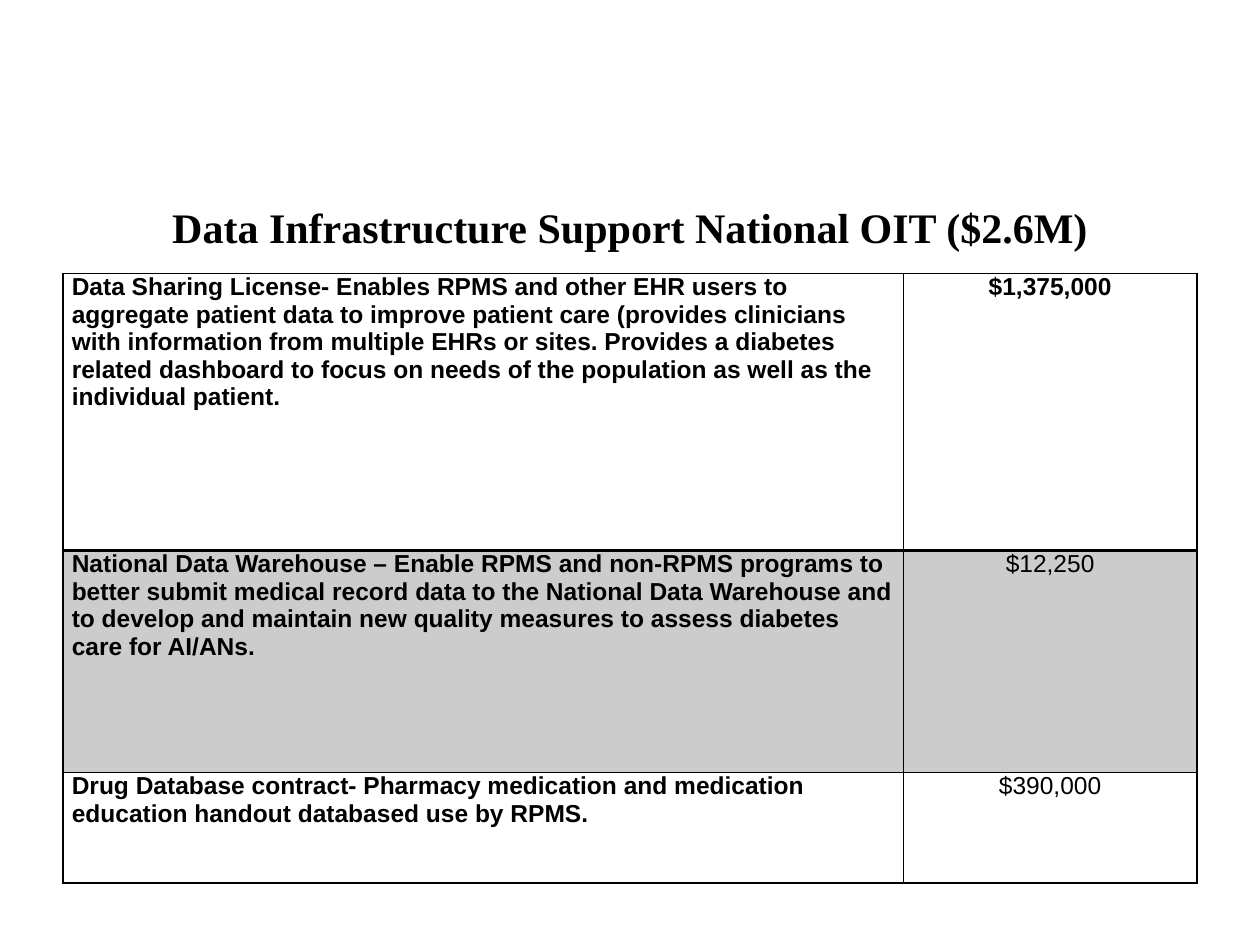
from lxml import etree
from pptx import Presentation
from pptx.dml.color import RGBColor
from pptx.enum.text import MSO_ANCHOR, PP_ALIGN
from pptx.oxml.ns import qn
from pptx.util import Inches, Pt

LEFT, CENTER = PP_ALIGN.LEFT, PP_ALIGN.CENTER
MIDDLE, TOP = MSO_ANCHOR.MIDDLE, MSO_ANCHOR.TOP

COLORS = {"ink": "000000", "white": "FFFFFF", "band": "CCCCCC"}
TITLE = "Data Infrastructure Support National OIT ($2.6M)"
BUDGET = [
    ("Data Sharing License- Enables RPMS and other EHR users to aggregate patient "
     "data to improve patient care (provides clinicians with information from "
     "multiple EHRs or sites. Provides a diabetes related dashboard to focus on "
     "needs of the population as well as the individual patient.",
     "$1,375,000", True, 2.2, "white"),
    ("National Data Warehouse – Enable RPMS and non-RPMS programs to better submit "
     "medical record data to the National Data Warehouse and to develop and "
     "maintain new quality measures to assess diabetes care for AI/ANs.",
     "$12,250", False, 1.76, "band"),
    ("Drug Database contract- Pharmacy medication and medication education "
     "handout databased use by RPMS.",
     "$390,000", False, 0.88, "white"),
]
COLUMN_WIDTHS = [6.67, 2.33]
MARGIN = 0.5


def write(frame, text, font_name, size, bold, align):
    para = frame.paragraphs[0]
    para.text = text
    para.alignment = align
    para.font.name = font_name
    para.font.size = Pt(size)
    para.font.bold = bold
    para.font.color.rgb = RGBColor.from_string(COLORS["ink"])


def add_borders(cell, widths):
    properties = cell._tc.get_or_add_tcPr()
    for index, (side, width) in enumerate(widths.items()):
        line = etree.Element(qn(f"a:ln{side}"), w=str(Pt(width)))
        fill = etree.SubElement(line, qn("a:solidFill"))
        etree.SubElement(fill, qn("a:srgbClr"), val=COLORS["ink"])
        properties.insert(index, line)


def add_title(page):
    box = page.shapes.add_textbox(Inches(MARGIN), Inches(1.42), Inches(9), Inches(0.75))
    frame = box.text_frame
    frame.word_wrap = True
    frame.vertical_anchor = MIDDLE
    write(frame, TITLE, "Times New Roman", 24, True, CENTER)


def add_budget(page):
    height = sum(row[3] for row in BUDGET)
    table = page.shapes.add_table(
        len(BUDGET), len(COLUMN_WIDTHS), Inches(MARGIN), Inches(2.17),
        Inches(sum(COLUMN_WIDTHS)), Inches(height)).table
    table.first_row = table.horz_banding = False
    for column, width in zip(table.columns, COLUMN_WIDTHS):
        column.width = Inches(width)
    for row_index, (purpose, amount, bold, row_height, fill) in enumerate(BUDGET):
        table.rows[row_index].height = Inches(row_height)
        widths = {"L": 1, "R": 1,
                  "T": 2 if row_index == 1 else 1,
                  "B": 2 if row_index == 0 else 1}
        contents = [(purpose, True, LEFT), (amount, bold, CENTER)]
        for column_index, (text, heavy, align) in enumerate(contents):
            cell = table.cell(row_index, column_index)
            cell.margin_left = cell.margin_right = Inches(0.07)
            cell.margin_top = cell.margin_bottom = 0
            cell.vertical_anchor = TOP
            cell.fill.solid()
            cell.fill.fore_color.rgb = RGBColor.from_string(COLORS[fill])
            write(cell.text_frame, text, "Arial", 14, heavy, align)
            add_borders(cell, widths)


def main():
    deck = Presentation()
    deck.slide_width, deck.slide_height = Inches(10), Inches(7.5)
    page = deck.slides.add_slide(deck.slide_layouts[6])
    add_title(page)
    add_budget(page)
    deck.save("out.pptx")


if __name__ == "__main__":
    main()
